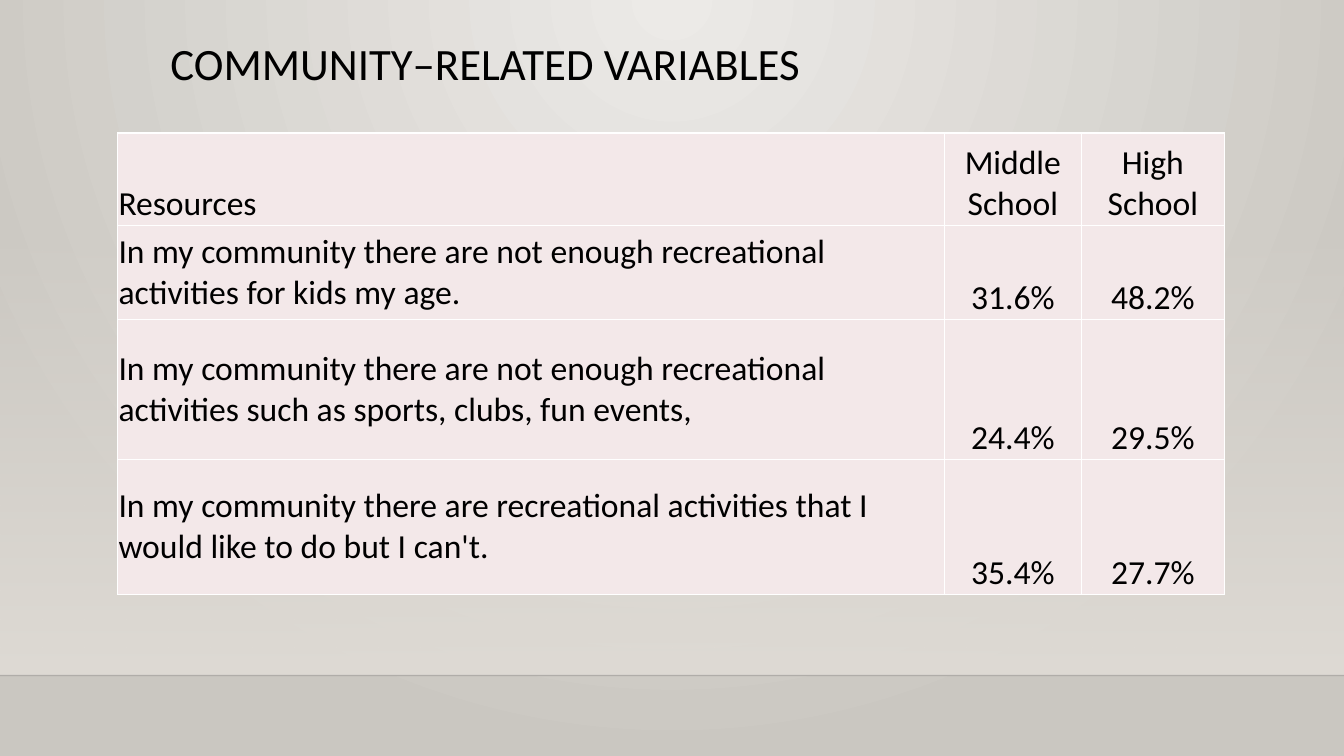
from lxml import etree
from pptx import Presentation
from pptx import oxml
from pptx.dml.color import RGBColor
from pptx.enum import shapes, text
from pptx.oxml import ns
from pptx.util import Pt

WIDTH, HEIGHT = 960, 540
FLOOR_TOP = 482.5
FONT = "Calibri"
BLACK, WHITE, CELL_FILL = "000000", "FFFFFF", "F3E8E9"

COLUMN_WIDTHS = [590.5, 98, 102]
ROW_HEIGHTS = [66, 67, 100, 96.5]
ROWS = [
    ("Resources", "Middle School", "High School"),
    ("In my community there are not enough recreational activities for kids my age.",
     "31.6%", "48.2%"),
    ("In my community there are not enough recreational activities such as sports, "
     "clubs, fun events,", "24.4%", "29.5%"),
    ("In my community there are recreational activities that I would like to do "
     "but I can't.", "35.4%", "27.7%"),
]


def color(value):
    return RGBColor.from_string(value)


def set_attributes(target, values):
    for name, value in values.items():
        setattr(target, name, value)


def format_paragraph(paragraph, size, alignment):
    paragraph.alignment = alignment
    set_attributes(paragraph.font, {"name": FONT, "size": Pt(size), "bold": False})
    paragraph.font.color.rgb = color(BLACK)


def set_gradient(fill, parent, stops, direction):
    """Stops are (position, colour, opacity), the numbers in percent."""
    fill.gradient()
    old = parent.find(".//" + ns.qn("a:gradFill"))
    stop_xml = "".join(
        f'<a:gs pos="{position * 1000}"><a:srgbClr val="{value}">'
        f'<a:alpha val="{opacity * 1000}"/></a:srgbClr></a:gs>'
        for position, value, opacity in stops)
    new = oxml.parse_xml(
        f'<a:gradFill {ns.nsdecls("a")} rotWithShape="1">'
        f"<a:gsLst>{stop_xml}</a:gsLst>{direction}</a:gradFill>")
    old.getparent().replace(old, new)


def add_backdrop(slide):
    # Light falling from the top centre
    set_gradient(
        slide.background.fill, slide.element,
        [(0, "ECEAE7", 100), (100, "CAC7C1", 100)],
        '<a:path path="circle"><a:fillToRect l="43000" r="43000" b="100000"/></a:path>')

    # Wall fading in down to the floor
    wall_top = 159
    wall = slide.shapes.add_shape(
        shapes.MSO_SHAPE.RECTANGLE, 0, Pt(wall_top), Pt(WIDTH), Pt(FLOOR_TOP - wall_top))
    wall.shadow.inherit = False
    wall.line.fill.background()
    set_gradient(wall.fill, wall.element, [(0, "DFDBD5", 0), (100, "DFDBD5", 100)],
                 '<a:lin ang="5400000" scaled="0"/>')

    # Floor edge
    edge = slide.shapes.add_connector(
        shapes.MSO_CONNECTOR.STRAIGHT, 0, Pt(FLOOR_TOP), Pt(WIDTH), Pt(FLOOR_TOP))
    edge.line.width = Pt(1)
    edge.line.color.rgb = color("000001")
    properties = edge.element.spPr
    edge_color = properties.find(".//" + ns.qn("a:srgbClr"))
    etree.SubElement(edge_color, ns.qn("a:alpha"), val="20000")
    etree.SubElement(properties, ns.qn("a:effectLst"))


def add_title(slide, words):
    title = slide.shapes.title
    set_attributes(title, {"left": Pt(114.5), "top": Pt(26.5),
                           "width": Pt(756), "height": Pt(68)})
    frame = title.text_frame
    frame.text = words
    set_attributes(frame, {"word_wrap": True, "auto_size": text.MSO_AUTO_SIZE.NONE,
                           "vertical_anchor": text.MSO_ANCHOR.TOP})
    paragraph = frame.paragraphs[0]
    format_paragraph(paragraph, 32, text.PP_ALIGN.LEFT)
    paragraph.line_spacing = 0.9


def add_borders(cell):
    properties = cell._tc.get_or_add_tcPr()
    for side in ("lnL", "lnR", "lnT", "lnB"):
        properties.append(oxml.parse_xml(
            f'<a:{side} {ns.nsdecls("a")} w="{Pt(1)}"><a:solidFill>'
            f'<a:srgbClr val="{WHITE}"/></a:solidFill></a:{side}>'))


def fill_cell(cell, words, alignment, anchor):
    cell.text = words
    margins = ("margin_left", "margin_right", "margin_top", "margin_bottom")
    set_attributes(cell, dict.fromkeys(margins, Pt(0.7)))
    cell.vertical_anchor = anchor
    format_paragraph(cell.text_frame.paragraphs[0], 24, alignment)
    add_borders(cell)
    cell.fill.solid()
    cell.fill.fore_color.rgb = color(CELL_FILL)


def add_results_table(slide):
    table = slide.shapes.add_table(
        len(ROWS), len(COLUMN_WIDTHS), Pt(84), Pt(95),
        Pt(sum(COLUMN_WIDTHS)), Pt(sum(ROW_HEIGHTS))).table
    set_attributes(table, {"first_row": False, "horz_banding": False})
    for column, width in zip(table.columns, COLUMN_WIDTHS):
        column.width = Pt(width)
    for row, height in zip(table.rows, ROW_HEIGHTS):
        row.height = Pt(height)

    # Statements sit mid-cell; the header and the percentages sit at the bottom
    for i, row in enumerate(ROWS):
        for j, words in enumerate(row):
            statement = i > 0 and j == 0
            fill_cell(table.cell(i, j), words,
                      text.PP_ALIGN.CENTER if j else text.PP_ALIGN.LEFT,
                      text.MSO_ANCHOR.MIDDLE if statement else text.MSO_ANCHOR.BOTTOM)


def main():
    presentation = Presentation()
    set_attributes(presentation, {"slide_width": Pt(WIDTH), "slide_height": Pt(HEIGHT)})
    title_only = presentation.slide_layouts.get_by_name("Title Only")
    slide = presentation.slides.add_slide(title_only)
    add_backdrop(slide)
    add_title(slide, "COMMUNITY–RELATED VARIABLES")
    add_results_table(slide)
    presentation.save("out.pptx")


if __name__ == "__main__":
    main()
